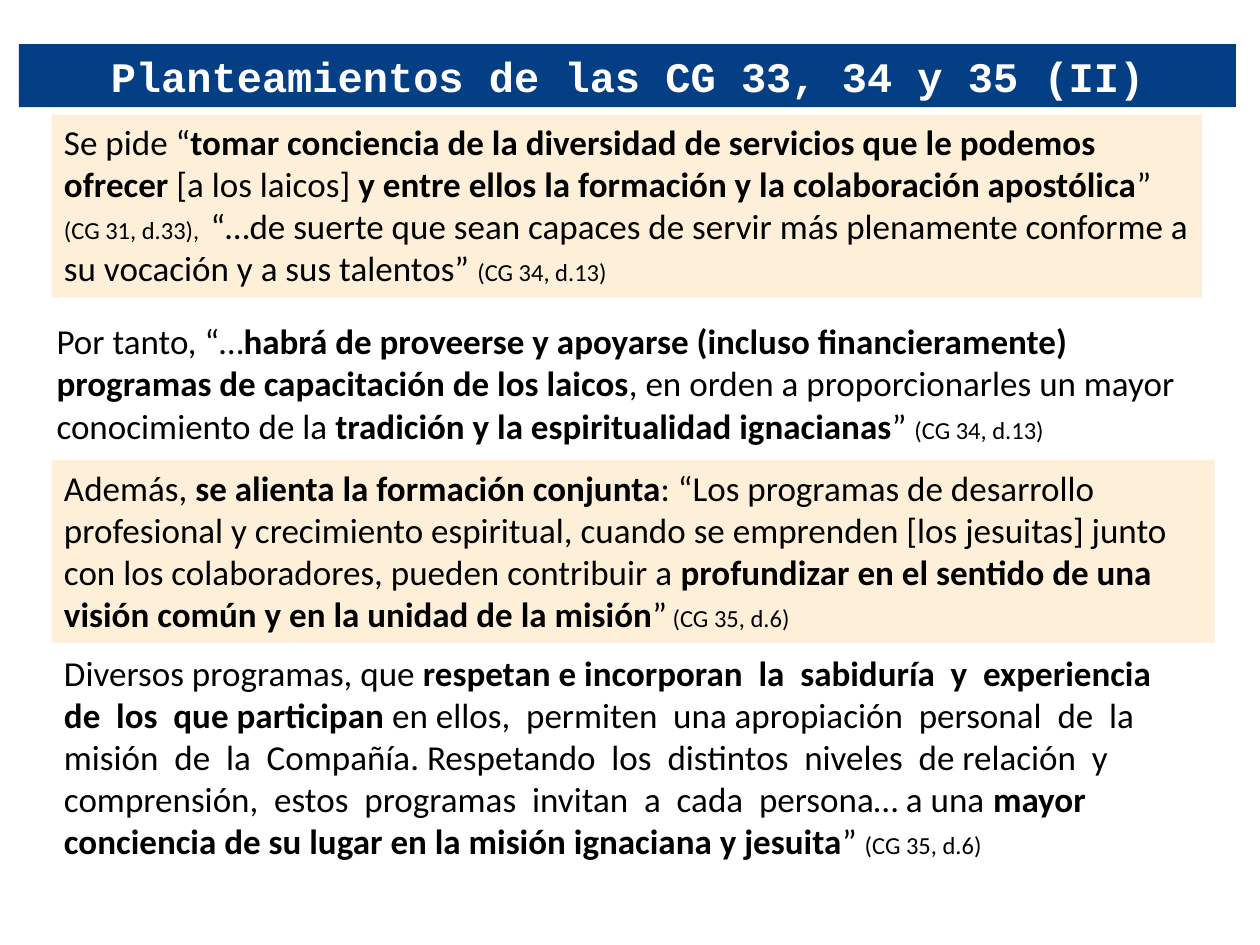
from dataclasses import dataclass

from pptx import Presentation
from pptx.dml.color import RGBColor
from pptx.enum.shapes import MSO_SHAPE
from pptx.enum.text import MSO_ANCHOR, MSO_AUTO_SIZE, PP_ALIGN
from pptx.util import Inches, Pt


@dataclass(frozen=True)
class Theme:
    navy: str = "043F86"
    cream: str = "FEEFD8"
    white: str = "FFFFFF"
    black: str = "000000"
    title_font: str = "Courier New"
    body_font: str = "Calibri"
    title_size: int = 24
    body_size: int = 20
    citation_size: int = 14
    columns: int = 100
    rows: int = 75


class SlideBuilder:
    def __init__(self, deck, theme):
        self.theme = theme
        self.slide = deck.slides.add_slide(deck.slide_layouts[6])
        self.column = deck.slide_width / theme.columns
        self.row = deck.slide_height / theme.rows
        self.formats = {
            "title": dict(name=theme.title_font, size=Pt(theme.title_size), bold=True),
            "plain": dict(name=theme.body_font, size=Pt(theme.body_size), bold=False),
            "strong": dict(name=theme.body_font, size=Pt(theme.body_size), bold=True),
            "cite": dict(name=theme.body_font, size=Pt(theme.citation_size), bold=False),
        }

    def panel(self, area, fill):
        left, top, width, height = area
        panel = self.slide.shapes.add_shape(
            MSO_SHAPE.RECTANGLE,
            round(left * self.column), round(top * self.row),
            round(width * self.column), round(height * self.row))
        panel.shadow.inherit = False
        panel.fill.solid()
        panel.fill.fore_color.rgb = RGBColor.from_string(fill)
        panel.line.fill.background()
        frame_format = dict(word_wrap=True, vertical_anchor=MSO_ANCHOR.TOP,
                            auto_size=MSO_AUTO_SIZE.SHAPE_TO_FIT_TEXT)
        for key, value in frame_format.items():
            setattr(panel.text_frame, key, value)
        return panel.text_frame.paragraphs[0]

    def add_passages(self, paragraph, passages, color, **paragraph_format):
        for key, value in paragraph_format.items():
            setattr(paragraph, key, value)
        for style, wording in passages:
            run = paragraph.add_run()
            run.text = wording
            run.font.color.rgb = RGBColor.from_string(color)
            for key, value in self.formats[style].items():
                setattr(run.font, key, value)

    def title(self, area, wording):
        self.add_passages(self.panel(area, self.theme.navy), [("title", wording)],
                          self.theme.white, alignment=PP_ALIGN.CENTER)

    def statement(self, area, fill, spacing, passages):
        self.add_passages(self.panel(area, fill), passages, self.theme.black,
                          alignment=PP_ALIGN.LEFT,
                          space_before=Pt(spacing), space_after=Pt(spacing))


def main():
    theme = Theme()
    deck = Presentation()
    deck.slide_width, deck.slide_height = Inches(10), Inches(7.5)
    builder = SlideBuilder(deck, theme)

    builder.title((1.5, 3.5, 96.6, 5), "Planteamientos de las CG 33, 34 y 35 (II)")

    statements = [
        ((4.1, 51.2, 92.3, 17.8), theme.white, 0, [
            ("plain", "Diversos programas, que "),
            ("strong", "respetan e incorporan  la  sabiduría  y  experiencia  de  los  que participan"),
            ("plain", " en ellos,  permiten  una apropiación  personal  de  la  misión  de  la  Compañía. "
                      "Respetando  los  distintos  niveles  de relación  y  comprensión,  estos  programas  "
                      "invitan  a  cada  persona… a una "),
            ("strong", "mayor conciencia de su lugar en la misión ignaciana y jesuita"),
            ("plain", "” "),
            ("cite", "(CG 35, d.6)"),
        ]),
        ((3.5, 24.9, 91.9, 11.1), theme.white, 1, [
            ("plain", "Por tanto, “…"),
            ("strong", "habrá de proveerse y apoyarse (incluso financieramente) "
                       "programas de capacitación de los laicos"),
            ("plain", ", en orden a proporcionarles un mayor conocimiento de la "),
            ("strong", "tradición y la espiritualidad ignacianas"),
            ("plain", "” "),
            ("cite", "(CG 34, d.13)"),
        ]),
        ((4.1, 9.1, 91.3, 14.5), theme.cream, 1, [
            ("plain", "Se pide “"),
            ("strong", "tomar conciencia de la diversidad de servicios que le podemos ofrecer "),
            ("plain", "[a los laicos] "),
            ("strong", "y entre ellos la formación y la colaboración apostólica"),
            ("plain", "” "),
            ("cite", "(CG 31, d.33),  "),
            ("plain", "“…de suerte que sean capaces de servir más plenamente conforme a "
                      "su vocación y a sus talentos” "),
            ("cite", "(CG 34, d.13)"),
        ]),
        ((4.1, 36.5, 92.3, 14.5), theme.cream, 1, [
            ("plain", "Además, "),
            ("strong", "se alienta la formación conjunta"),
            ("plain", ": “Los programas de desarrollo profesional y crecimiento espiritual, cuando se "
                      "emprenden [los jesuitas] junto con los colaboradores, pueden contribuir a "),
            ("strong", "profundizar en el sentido de una visión común y en la unidad de la misión"),
            ("plain", "”"),
            ("cite", " (CG 35, d.6)"),
        ]),
    ]
    for area, fill, spacing, passages in statements:
        builder.statement(area, fill, spacing, passages)

    deck.save("out.pptx")


if __name__ == "__main__":
    main()
